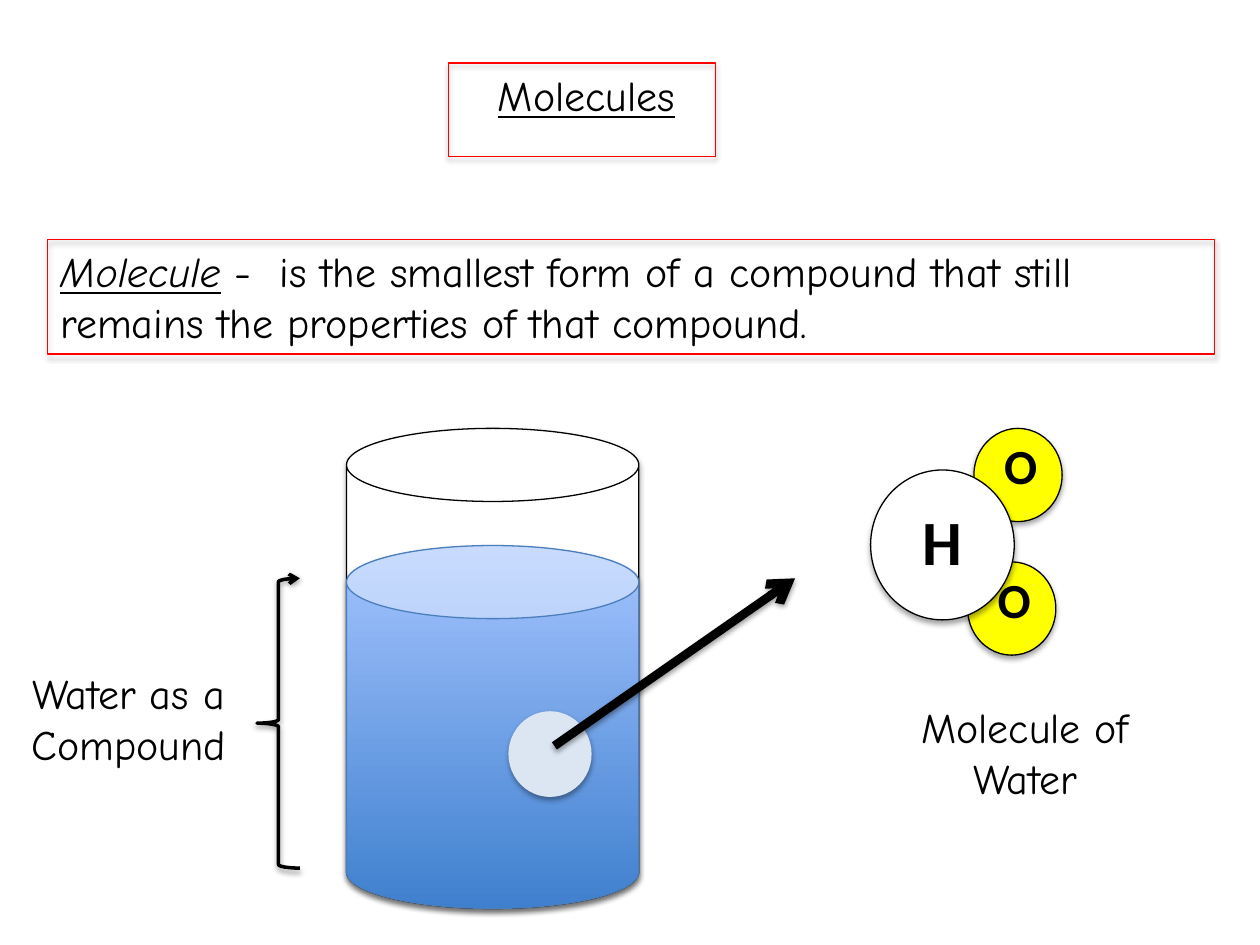
import pptx
import pptx.dml.color
import pptx.enum.dml
import pptx.enum.shapes
import pptx.enum.text
import pptx.oxml
import pptx.oxml.ns
import pptx.util

Inches = pptx.util.Inches
Pt = pptx.util.Pt
RGB = pptx.dml.color.RGBColor
Form = pptx.enum.shapes.MSO_SHAPE
Align = pptx.enum.text.PP_ALIGN

BLACK = RGB(0x00, 0x00, 0x00)
WHITE = RGB(0xFF, 0xFF, 0xFF)
RED = RGB(0xFF, 0x00, 0x00)
YELLOW = RGB(0xFF, 0xFF, 0x00)
PALE = RGB(0xDC, 0xE6, 0xF2)
EDGE = RGB(0x4B, 0x7E, 0xBC)
DEEP = RGB(0x3F, 0x80, 0xCE)
LIGHT = RGB(0xA4, 0xC4, 0xFF)

NOTE = {"name": "Comic Neue", "size": Pt(24)}
ATOM = {"name": "Calibri", "bold": True}


class Board:
    def __init__(self, deck):
        self.slide = deck.slides.add_slide(deck.slide_layouts[5])
        self.shapes = self.slide.shapes

    def letter(self, box, runs, align=Align.LEFT):
        """Fill a text box with (text, font values) runs."""
        frame = box.text_frame
        frame.word_wrap = True
        frame.vertical_anchor = pptx.enum.text.MSO_ANCHOR.TOP
        frame.auto_size = pptx.enum.text.MSO_AUTO_SIZE.SHAPE_TO_FIT_TEXT
        para = frame.paragraphs[0]
        para.alignment = align
        for text, style in runs:
            run = para.add_run()
            run.text = text
            run.font.color.rgb = BLACK
            for key, value in style.items():
                setattr(run.font, key, value)

    def title(self, area, text):
        box = self.shapes.title
        sides = ("left", "top", "width", "height")
        for side, value in zip(sides, area):
            setattr(box, side, Inches(value))
        self.letter(box, [(text, {**NOTE, "underline": True})], Align.CENTER)

    def text(self, area, runs, align=Align.LEFT):
        box = self.shapes.add_textbox(*map(Inches, area))
        self.letter(box, runs, align)

    def shape(self, form, area, fill, edge, width=0.75, dark=35, drop=1.8):
        """Add a shape; fill is a colour, a (from, to) pair or None."""
        item = self.shapes.add_shape(form, *map(Inches, area))
        if fill is None:
            item.fill.background()
        elif isinstance(fill, list):
            item.fill.gradient()
            item.fill.gradient_angle = 90
            for stop, color in zip(item.fill.gradient_stops, fill):
                stop.color.rgb = color
        else:
            item.fill.solid()
            item.fill.fore_color.rgb = fill
        self.finish(item, edge, width, dark, drop)
        return item

    def arrow(self, start, end, width):
        kind = pptx.enum.shapes.MSO_CONNECTOR.STRAIGHT
        item = self.shapes.add_connector(kind, *map(Inches, start + end))
        self.finish(item, BLACK, width, 38, 1.6)
        self.tip(item)

    def finish(self, item, edge, width, dark, drop):
        """Set the outline and the soft shadow below."""
        item.line.color.rgb = edge
        item.line.width = Pt(width)
        item._element.spPr.append(pptx.oxml.parse_xml(
            f'<a:effectLst {pptx.oxml.ns.nsdecls("a")}>'
            f'<a:outerShdw blurRad="{Pt(3.1)}" dist="{Pt(drop)}" '
            f'dir="5400000" rotWithShape="0"><a:srgbClr val="000000">'
            f'<a:alpha val="{dark * 1000}"/></a:srgbClr>'
            f'</a:outerShdw></a:effectLst>'))

    def tip(self, item):
        """Put an open arrowhead at the end of the line."""
        item.line._get_or_add_ln().append(pptx.oxml.parse_xml(
            f'<a:tailEnd {pptx.oxml.ns.nsdecls("a")} type="arrow"/>'))

    def atom(self, area, fill, shift, size, sign, label):
        """Draw a ball with its sign in a box of the label size."""
        self.shape(Form.OVAL, area, fill, BLACK)
        spot = (area[0] + shift[0], area[1] + shift[1])
        self.text(spot + label, [(sign, {**ATOM, "size": Pt(size)})])


def main():
    deck = pptx.Presentation()
    deck.slide_width, deck.slide_height = Inches(10), Inches(7.5)
    board = Board(deck)

    board.title((2.39, 0.5, 4.53, 0.5), "Molecules")
    board.shape(Form.RECTANGLE, (3.56, 0.5, 2.12, 0.74), None, RED)

    area = (0.38, 1.9, 9.26, 0.91)
    board.text(area, [
        ("Molecule", {**NOTE, "italic": True, "underline": True}),
        (" -  is the smallest form of a compound that still remains "
         "the properties of that compound.", NOTE)])
    board.shape(Form.RECTANGLE, area, None, RED)

    # Glass, water and the spot that is enlarged
    board.shape(Form.CAN, (2.75, 3.4, 2.32, 3.81), WHITE, BLACK)
    board.shape(Form.CAN, (2.75, 4.33, 2.32, 2.88), [DEEP, LIGHT], EDGE)
    board.shape(Form.OVAL, (4.04, 5.65, 0.65, 0.67), PALE, PALE)
    board.arrow((4.4, 5.92), (6.31, 4.59), 5)

    for left, top in ((7.73, 3.4), (7.68, 4.46)):
        board.atom((left, top, 0.7, 0.74), YELLOW, (0.14, 0.01), 28,
                   "O", (0.38, 1.04))
    board.atom((6.91, 3.73, 1.14, 1.19), WHITE, (0.31, 0.21), 36,
               "H", (0.51, 1.31))
    board.text((6.91, 5.52, 2.45, 0.91), [("Molecule of Water", NOTE)],
               Align.CENTER)

    brace = board.shape(Form.LEFT_BRACE, (2.04, 4.59, 0.34, 2.3), None,
                        BLACK, 2, 38, 1.6)
    board.tip(brace)
    board.text((0, 5.25, 2.04, 0.91), [("Water as a Compound", NOTE)],
               Align.CENTER)

    deck.save("out.pptx")


if __name__ == "__main__":
    main()
